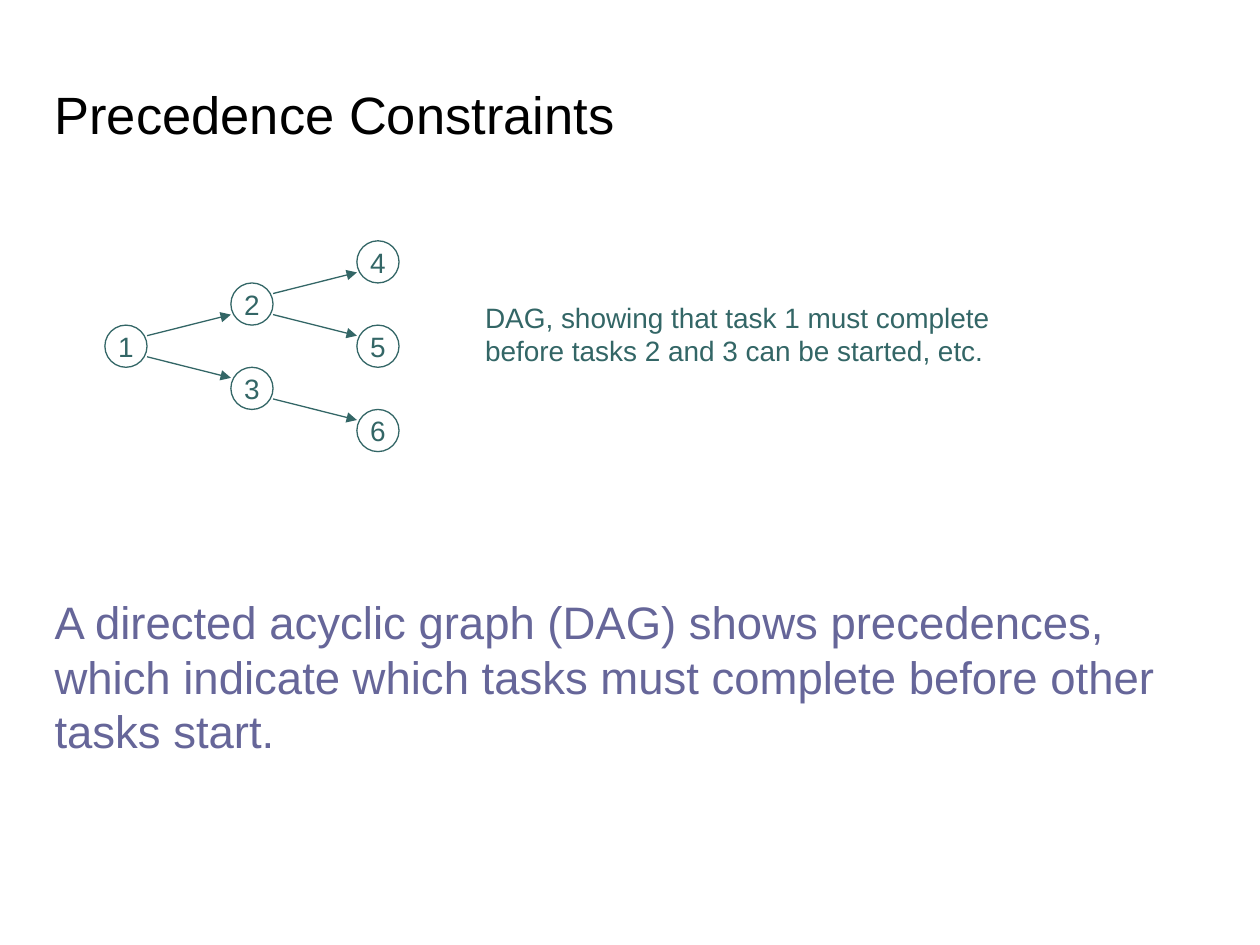
"""Build a slide that explains precedence constraints with a task graph."""
from dataclasses import dataclass

from lxml import etree
from pptx import Presentation
from pptx import util as u
from pptx.dml.color import RGBColor
from pptx.enum import shapes, text
from pptx.oxml import ns

BLACK = RGBColor(0x00, 0x00, 0x00)
WHITE = RGBColor(0xFF, 0xFF, 0xFF)
TEAL = RGBColor(0x33, 0x66, 0x66)
VIOLET = RGBColor(0x66, 0x66, 0x99)

FONT = "Arial"
LINE_WIDTH = u.Pt(0.75)
DIAMETER = u.Cm(0.85)
COLUMN_STEP = u.Cm(2.54)
ROW_STEP = u.Cm(0.85)
ROOT_X = u.Cm(2.54)
ROOT_Y = u.Cm(6.98)


@dataclass(frozen=True)
class Task:
    """A node placed by column and by rows above or below the root."""

    label: str
    column: int
    row: int

    @property
    def x(self) -> int:
        return ROOT_X + self.column * COLUMN_STEP

    @property
    def y(self) -> int:
        return ROOT_Y + self.row * ROW_STEP


TASKS = {
    task.label: task
    for task in (
        Task("1", 0, 0),
        Task("2", 1, -1),
        Task("3", 1, 1),
        Task("4", 2, -2),
        Task("5", 2, 0),
        Task("6", 2, 2),
    )
}
PRECEDENCES = ("12", "24", "25", "13", "36")


def write(shape, content: str, *, size: float, color: RGBColor,
          anchor=text.MSO_ANCHOR.TOP, align=text.PP_ALIGN.LEFT,
          wrap: bool = True, before: float = 0) -> None:
    """Fill a shape with one formatted paragraph."""
    frame = shape.text_frame
    frame.word_wrap = wrap
    frame.vertical_anchor = anchor
    para = frame.paragraphs[0]
    para.alignment = align
    para.space_before = u.Pt(before)
    span = para.add_run()
    span.text = content
    span.font.name = FONT
    span.font.size = u.Pt(size)
    span.font.color.rgb = color


def draw_task(page, task: Task) -> None:
    """Draw a task as a labelled circle."""
    circle = page.shapes.add_shape(
        shapes.MSO_SHAPE.OVAL, task.x - DIAMETER // 2, task.y - DIAMETER // 2,
        DIAMETER, DIAMETER)
    circle.shadow.inherit = False
    circle.fill.solid()
    circle.fill.fore_color.rgb = WHITE
    circle.line.color.rgb = TEAL
    circle.line.width = LINE_WIDTH
    write(circle, task.label, size=16, color=TEAL, wrap=False,
          anchor=text.MSO_ANCHOR.MIDDLE, align=text.PP_ALIGN.CENTER)


def draw_precedence(page, first: Task, then: Task) -> None:
    """Draw an arrow between two tasks, a quarter diameter off their centres."""
    shift = DIAMETER // 4 if then.row > first.row else -DIAMETER // 4
    arrow = page.shapes.add_connector(
        shapes.MSO_CONNECTOR.STRAIGHT,
        first.x + DIAMETER // 2, first.y + shift,
        then.x - DIAMETER // 2, then.y - shift)
    arrow.line.color.rgb = TEAL
    arrow.line.width = LINE_WIDTH
    etree.SubElement(arrow.line._get_or_add_ln(), ns.qn("a:tailEnd"), type="triangle")
    etree.SubElement(arrow._element.spPr, ns.qn("a:effectLst"))


def main() -> None:
    """Assemble and save the deck."""
    deck = Presentation()
    deck.slide_width, deck.slide_height = u.Cm(25.4), u.Cm(19.05)
    page = deck.slides.add_slide(deck.slide_layouts[6])

    title = page.shapes.add_textbox(u.Cm(0.85), u.Cm(0.53), u.Cm(23.92), u.Cm(3.5))
    write(title, "Precedence Constraints", size=30, color=BLACK,
          anchor=text.MSO_ANCHOR.MIDDLE)

    body = page.shapes.add_textbox(u.Cm(0.85), u.Cm(11.85), u.Cm(23.92), u.Cm(6.15))
    write(body, "A directed acyclic graph (DAG) shows precedences, which indicate "
          "which tasks must complete before other tasks start.",
          size=26, color=VIOLET, before=5.2)

    for task in TASKS.values():
        draw_task(page, task)
    for first, then in PRECEDENCES:
        draw_precedence(page, TASKS[first], TASKS[then])

    caption = page.shapes.add_textbox(u.Cm(9.53), u.Cm(5.93), u.Cm(10.85), u.Cm(1.63))
    write(caption, "DAG, showing that task 1 must complete before tasks 2 and 3 "
          "can be started, etc.", size=16, color=TEAL)

    deck.save("out.pptx")


if __name__ == "__main__":
    main()
